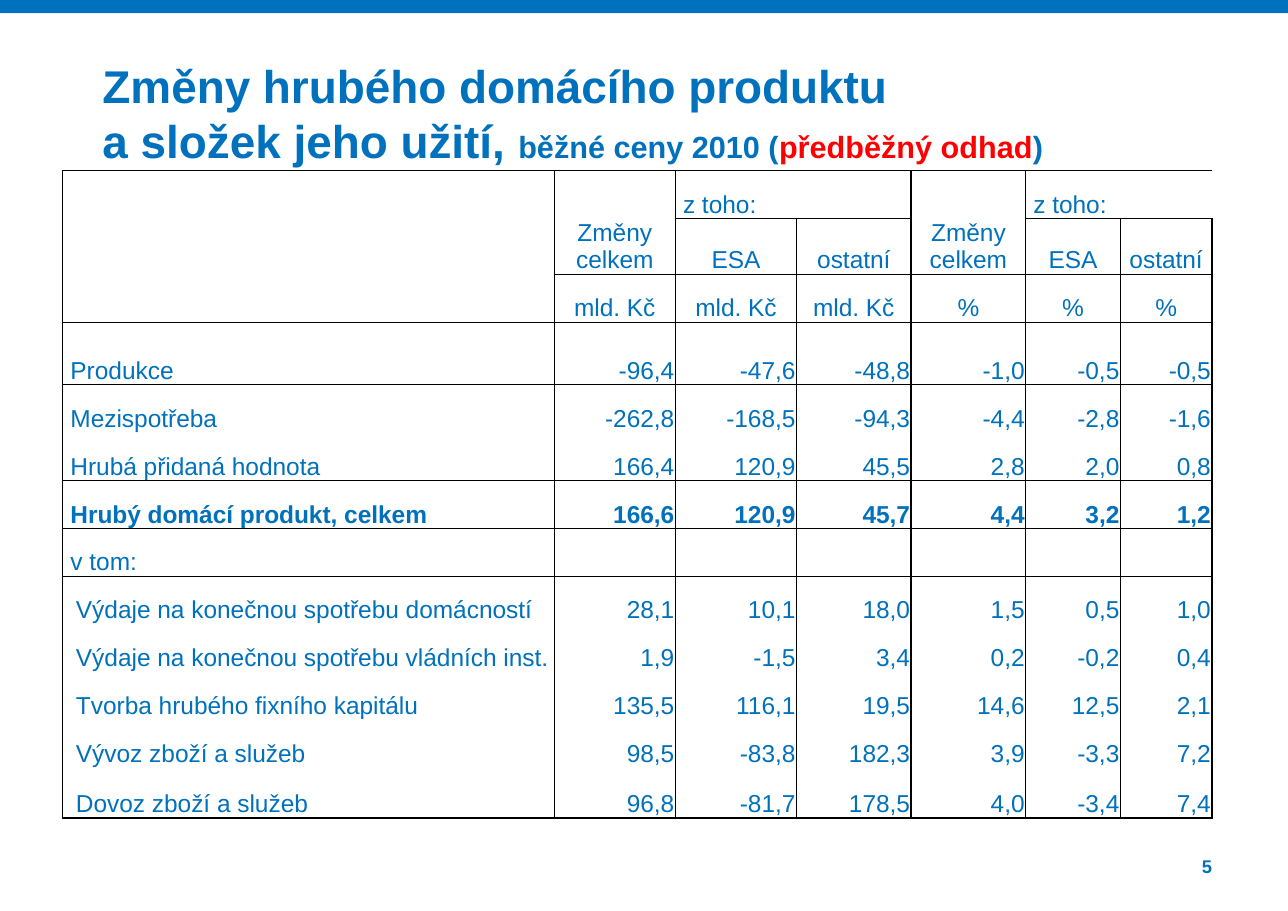
from dataclasses import dataclass

from lxml import etree
from pptx import Presentation
from pptx.dml.color import RGBColor
from pptx.enum.shapes import MSO_SHAPE
from pptx.enum.text import MSO_ANCHOR, MSO_AUTO_SIZE, PP_ALIGN
from pptx.oxml.ns import qn
from pptx.util import Inches, Pt

RECT = MSO_SHAPE.RECTANGLE
LEFT, MID, RIGHT = PP_ALIGN.LEFT, PP_ALIGN.CENTER, PP_ALIGN.RIGHT
TOP, CENTER, BOTTOM = MSO_ANCHOR.TOP, MSO_ANCHOR.MIDDLE, MSO_ANCHOR.BOTTOM
NO_FIT = MSO_AUTO_SIZE.NONE

COLORS = {"blue": "0071BC", "red": "FF0000", "black": "000000"}
PLAIN = "{2D5ABB26-0587-4C30-8999-92F81FD0307C}"
BARE = {"margin_left": 0, "margin_right": 0, "margin_top": 0, "margin_bottom": 0,
        "word_wrap": True, "auto_size": NO_FIT}
TIGHT = {"margin_left": Inches(0.01), "margin_right": Inches(0.01),
         "margin_top": Inches(0.01), "margin_bottom": 0, "vertical_anchor": BOTTOM}


@dataclass
class Span:
    row: int
    col: int
    high: int
    wide: int


@dataclass
class Item:
    label: str
    data: str = ""
    inset: float = 0.07
    bold: bool = False


@dataclass
class Piece:
    text: str
    size: int
    color: str = "blue"


SPANS = [Span(0, 0, 3, 1), Span(0, 1, 2, 1), Span(0, 2, 1, 2),
         Span(0, 4, 2, 1), Span(0, 5, 1, 2)]
HEADS = [["", "Změny celkem", "z toho:", "", "Změny celkem", "z toho:", ""],
         ["", "", "ESA", "ostatní", "", "ESA", "ostatní"],
         [""] + ["mld. Kč"] * 3 + ["%"] * 3]
ITEMS = [
    Item("Produkce", "-96,4 -47,6 -48,8 -1,0 -0,5 -0,5"),
    Item("Mezispotřeba", "-262,8 -168,5 -94,3 -4,4 -2,8 -1,6"),
    Item("Hrubá přidaná hodnota", "166,4 120,9 45,5 2,8 2,0 0,8"),
    Item("Hrubý domácí produkt, celkem", "166,6 120,9 45,7 4,4 3,2 1,2", bold=True),
    Item("v tom:"),
    Item("Výdaje na konečnou spotřebu domácností", "28,1 10,1 18,0 1,5 0,5 1,0", 0.12),
    Item("Výdaje na konečnou spotřebu vládních inst.", "1,9 -1,5 3,4 0,2 -0,2 0,4", 0.12),
    Item("Tvorba hrubého fixního kapitálu", "135,5 116,1 19,5 14,6 12,5 2,1", 0.12),
    Item("Vývoz zboží a služeb", "98,5 -83,8 182,3 3,9 -3,3 7,2", 0.12),
    Item("Dovoz zboží a služeb", "96,8 -81,7 178,5 4,0 -3,4 7,4", 0.12),
]
LINES = [
    [Piece("Změny hrubého domácího produktu", 30)],
    [Piece("a složek jeho užití, ", 30), Piece("běžné ceny 2010 (", 20),
     Piece("předběžný odhad", 20, "red"), Piece(")", 20)],
]
WIDTHS = [4.46, 1.1, 1.1, 1.04, 1.04, 0.86, 0.83]
HIGH = 5.81
TALL = {3: 0.57, 12: 0.46}
ROWS, COLS = len(HEADS) + len(ITEMS), len(WIDTHS)
ACROSS = {0: 1, 1: 0.5, 2: 0.5, 3: 0.5, 6: 0.5, 7: 0.5, ROWS: 1}
DOWN = {0: 1, 1: 1, 2: 0.5, 3: 0.5, 4: 1, 5: 0.5, 6: 0.5, 7: 1}
OWNER = {(s.row + r, s.col + c): (s.row, s.col)
         for s in SPANS for r in range(s.high) for c in range(s.wide)}


def apply(thing, values: dict) -> None:
    for name, value in values.items():
        setattr(thing, name, value)


def style(font, size: int, color: str = "blue", bold: bool = False) -> None:
    apply(font, {"name": "Arial", "size": Pt(size), "bold": bold})
    font.color.rgb = RGBColor.from_string(COLORS[color])


def owner(row: int, col: int) -> tuple:
    return OWNER.get((row, col), (row, col))


def border(cell, row: int, col: int) -> None:
    sides = {"L": (DOWN.get(col), row, col - 1),
             "R": (DOWN.get(col + 1), row, col + 1),
             "T": (ACROSS.get(row), row - 1, col),
             "B": (ACROSS.get(row + 1), row + 1, col)}
    props = cell._tc.get_or_add_tcPr()
    for side, (width, near, next_col) in sides.items():
        if width and owner(row, col) != owner(near, next_col):
            line = etree.SubElement(props, qn(f"a:ln{side}"), w=str(Pt(width)))
            fill = etree.SubElement(line, qn("a:solidFill"))
            etree.SubElement(fill, qn("a:srgbClr"), val=COLORS["black"])


def write(cell, text: str, align: PP_ALIGN, inset: float, bold: bool) -> None:
    apply(cell, TIGHT | {"margin_left": Inches(inset)})
    if text:
        para = cell.text_frame.paragraphs[0]
        para.alignment = align
        run = para.add_run()
        run.text = text
        style(run.font, 16, bold=bold)


def add_grid(slide) -> None:
    frame = slide.shapes.add_table(ROWS, COLS, Inches(0.57), Inches(1.55),
                                   Inches(sum(WIDTHS)), Inches(HIGH))
    table = frame.table
    apply(table, {"first_row": False, "horz_banding": False})
    table._tbl.tblPr.find(qn("a:tableStyleId")).text = PLAIN
    for col, width in zip(table.columns, WIDTHS):
        col.width = Inches(width)
    even = (HIGH - sum(TALL.values())) / (ROWS - len(TALL))
    for index, row in enumerate(table.rows):
        row.height = Inches(TALL.get(index, even))
    for r in range(ROWS):
        for c in range(COLS):
            cell = table.cell(r, c)
            border(cell, r, c)
            cell.fill.background()
    for s in SPANS:
        table.cell(s.row, s.col).merge(
            table.cell(s.row + s.high - 1, s.col + s.wide - 1))
    for r, heads in enumerate(HEADS):
        for c, text in enumerate(heads):
            group = text == "z toho:"
            write(table.cell(r, c), text, LEFT if group else MID,
                  0.07 if group else 0.01, False)
    for r, item in enumerate(ITEMS, len(HEADS)):
        write(table.cell(r, 0), item.label, LEFT, item.inset, item.bold)
        for c, text in enumerate(item.data.split(), 1):
            write(table.cell(r, c), text, RIGHT, 0.01, item.bold)


def add_title(slide) -> None:
    title = slide.shapes.title
    apply(title, {"left": Inches(0.93), "top": Inches(0.49),
                  "width": Inches(10.08), "height": Inches(1.06)})
    apply(title.text_frame, BARE | {"vertical_anchor": CENTER})
    para = title.text_frame.paragraphs[0]
    apply(para, {"alignment": LEFT, "line_spacing": Pt(36)})
    for index, line in enumerate(LINES):
        if index:
            para.add_line_break()
        for piece in line:
            run = para.add_run()
            run.text = piece.text
            style(run.font, piece.size, piece.color, True)


def add_frame(slide, width: int) -> None:
    bar = slide.shapes.add_shape(RECT, 0, 0, width, Inches(0.12))
    bar.shadow.inherit = False
    bar.fill.solid()
    bar.fill.fore_color.rgb = RGBColor.from_string(COLORS["blue"])
    bar.line.fill.background()
    box = slide.shapes.add_textbox(Inches(10.22), Inches(7.76), Inches(0.78), Inches(0.21))
    apply(box.text_frame, BARE | {"vertical_anchor": TOP})
    para = box.text_frame.paragraphs[0]
    para.alignment = RIGHT
    run = para.add_run()
    run.text = "5"
    style(run.font, 12, bold=True)


def main() -> None:
    deck = Presentation()
    apply(deck, {"slide_width": Inches(11.69), "slide_height": Inches(8.27)})
    slide = deck.slides.add_slide(deck.slide_layouts[5])
    add_frame(slide, deck.slide_width)
    add_title(slide)
    add_grid(slide)
    deck.save("out.pptx")


if __name__ == "__main__":
    main()
